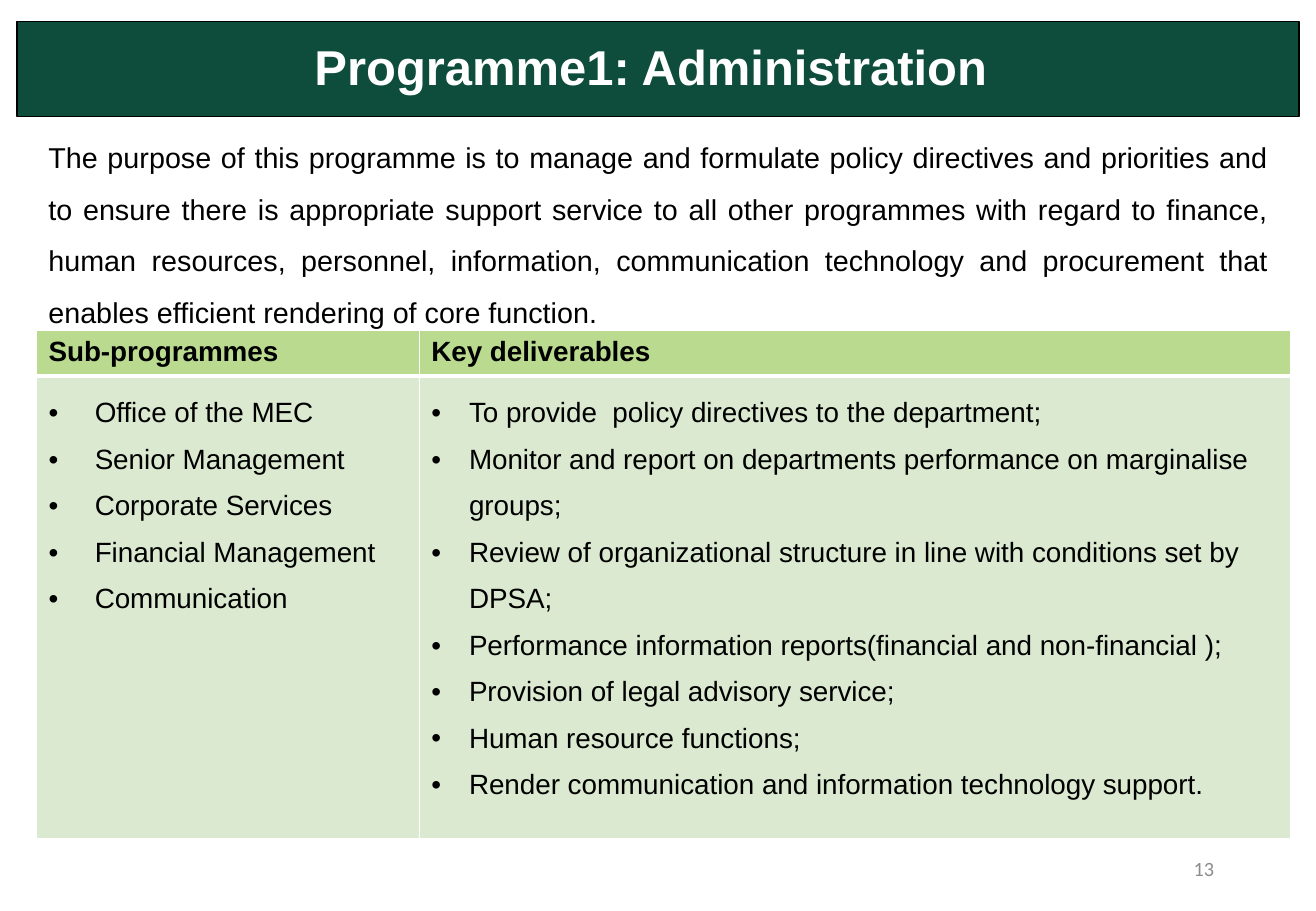
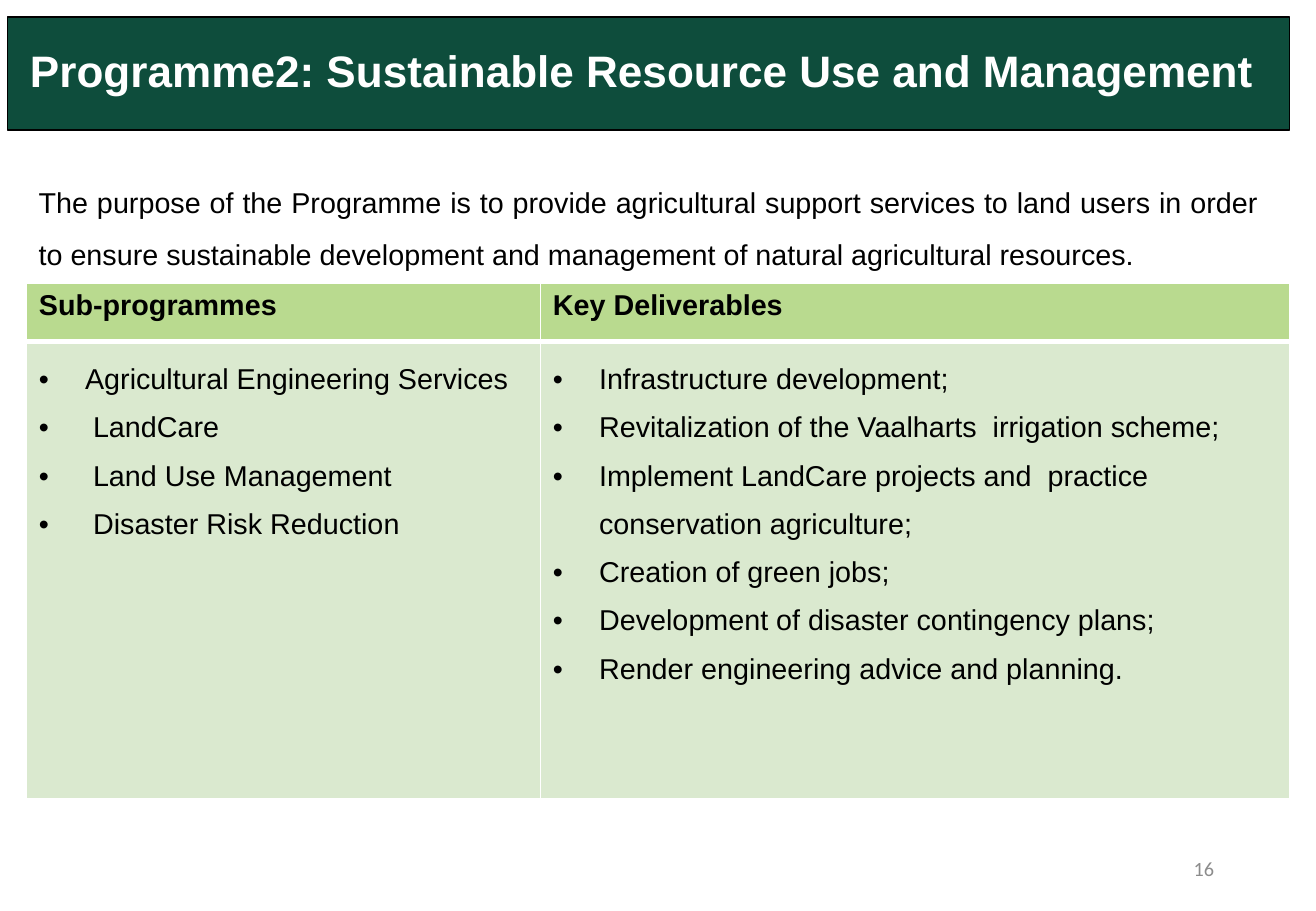
from lxml.etree import SubElement
from pptx import Presentation
from pptx.dml.color import RGBColor
from pptx.enum.shapes import MSO_SHAPE
from pptx.enum.text import MSO_ANCHOR, PP_ALIGN
from pptx.oxml.ns import qn
from pptx.util import Inches, Pt

COLORS = {
    "band": "0E4D3C",
    "head": "B9DA8F",
    "body": "DAE9CF",
    "text": "000000",
    "white": "FFFFFF",
    "page": "8C8C8C",
}

PAGES = [
    {
        "title": "Programme1: Administration ",
        "band": (0.14, 0.18, 10.55, 0.78),
        "title_size": 29,
        "intro": "The purpose of this programme is to manage and formulate policy "
                 "directives and priorities and to ensure there is appropriate support "
                 "service to all other programmes with regard to finance, human "
                 "resources, personnel, information, communication technology and "
                 "procurement that enables efficient rendering of core function.",
        "intro_box": (0.3, 0.96, 10.24, 1.76),
        "table_at": (0.3, 2.72),
        "cols": (3.15, 7.17),
        "rows": (0.36, 3.49),
        "size": 16.5,
        "indents": (0.38, 0.31),
        "heads": ("Sub-programmes", "Key deliverables"),
        "lists": (
            ["Office of the MEC", "Senior Management", "Corporate Services",
             "Financial Management", "Communication"],
            ["To provide  policy directives to the department;",
             "Monitor and report on departments performance on marginalise groups;",
             "Review of organizational structure in line with conditions set by DPSA;",
             "Performance information reports(financial and non-financial );",
             "Provision of legal advisory service;",
             "Human resource functions;",
             "Render communication and information technology support."],
        ),
        "number": "13",
    },
    {
        "title": "Programme2: Sustainable Resource Use and Management ",
        "band": (0.06, 0.14, 10.55, 0.93),
        "title_size": 26.1,
        "intro": "The purpose of the Programme is to provide agricultural support "
                 "services to land users in order to ensure sustainable development and "
                 "management of natural agricultural resources.",
        "intro_box": (0.22, 1.33, 10.24, 1),
        "table_at": (0.22, 2.33),
        "cols": (4.23, 6.16),
        "rows": (0.48, 3.77),
        "size": 17,
        "indents": (0.38, 0.38),
        "heads": ("Sub-programmes", "Key Deliverables"),
        "lists": (
            ["Agricultural Engineering Services", " LandCare",
             " Land Use Management", " Disaster Risk Reduction"],
            ["Infrastructure development;",
             "Revitalization of the Vaalharts  irrigation scheme;",
             "Implement LandCare projects and  practice conservation agriculture;",
             "Creation of green jobs;",
             "Development of disaster contingency plans;",
             "Render engineering advice and planning."],
        ),
        "number": "16",
    },
]


def color(name):
    return RGBColor.from_string(COLORS[name])


def style(para, size, tint="text", bold=False, face="Arial"):
    font = para.font
    font.name = face
    font.size = Pt(size)
    font.bold = bold
    font.color.rgb = color(tint)


def add_band(slide, text, box, size):
    band = slide.shapes.add_shape(MSO_SHAPE.RECTANGLE, *map(Inches, box))
    band.shadow.inherit = False
    band.fill.solid()
    band.fill.fore_color.rgb = color("band")
    band.line.color.rgb = color("text")
    band.line.width = Pt(0.75)
    frame = band.text_frame
    frame.word_wrap = True
    frame.vertical_anchor = MSO_ANCHOR.MIDDLE
    para = frame.paragraphs[0]
    para.text = text
    para.alignment = PP_ALIGN.CENTER
    para.line_spacing = 0.9
    style(para, size, "white", True)


def add_text(slide, text, box, align, anchor=MSO_ANCHOR.TOP, spacing=1.0, **look):
    frame = slide.shapes.add_textbox(*map(Inches, box)).text_frame
    frame.word_wrap = True
    frame.vertical_anchor = anchor
    para = frame.paragraphs[0]
    para.text = text
    para.alignment = align
    para.line_spacing = spacing
    style(para, **look)


def add_bullet(para, indent):
    props = para._p.get_or_add_pPr()
    props.set("marL", str(Inches(indent)))
    props.set("indent", str(-Inches(indent)))
    SubElement(props, qn("a:buFont"), typeface="Arial")
    SubElement(props, qn("a:buChar"), char="•")


def paint_cell(cell, tint, top, bottom):
    props = cell._tc.get_or_add_tcPr()
    for side, width in (("L", 1), ("R", 1), ("T", top), ("B", bottom)):
        edge = SubElement(props, qn("a:ln" + side), w=str(Pt(width)))
        fill = SubElement(edge, qn("a:solidFill"))
        SubElement(fill, qn("a:srgbClr"), val=COLORS["white"])
    cell.fill.solid()
    cell.fill.fore_color.rgb = color(tint)


def fill_list(frame, items, indent, size):
    for index, item in enumerate(items):
        para = frame.add_paragraph() if index else frame.paragraphs[0]
        para.text = item
        para.line_spacing = 1.5
        add_bullet(para, indent)
        style(para, size)


def add_grid(slide, page):
    cols, rows = page["cols"], page["rows"]
    box = (*page["table_at"], sum(cols), sum(rows))
    table = slide.shapes.add_table(len(rows), len(cols), *map(Inches, box)).table
    table.first_row = table.horz_banding = False
    for row, height in zip(table.rows, rows):
        row.height = Inches(height)
    for index, width in enumerate(cols):
        table.columns[index].width = Inches(width)
        head, body = table.cell(0, index), table.cell(1, index)
        paint_cell(head, "head", 1, 3)
        paint_cell(body, "body", 3, 1)
        para = head.text_frame.paragraphs[0]
        para.text = page["heads"][index]
        style(para, page["size"], bold=True)
        fill_list(body.text_frame, page["lists"][index],
                  page["indents"][index], page["size"])


def add_page(deck, page):
    slide = deck.slides.add_slide(deck.slide_layouts[6])
    add_band(slide, page["title"], page["band"], page["title_size"])
    add_text(slide, page["intro"], page["intro_box"], PP_ALIGN.JUSTIFY,
             spacing=1.5, size=17)
    add_text(slide, page["number"], (7.65, 6.95, 2.44, 0.4), PP_ALIGN.RIGHT,
             MSO_ANCHOR.MIDDLE, size=12, tint="page", face="Calibri")
    add_grid(slide, page)


def main():
    deck = Presentation()
    deck.slide_width = Inches(10.83)
    deck.slide_height = Inches(7.5)
    for page in PAGES:
        add_page(deck, page)
    deck.save("out.pptx")


if __name__ == "__main__":
    main()
